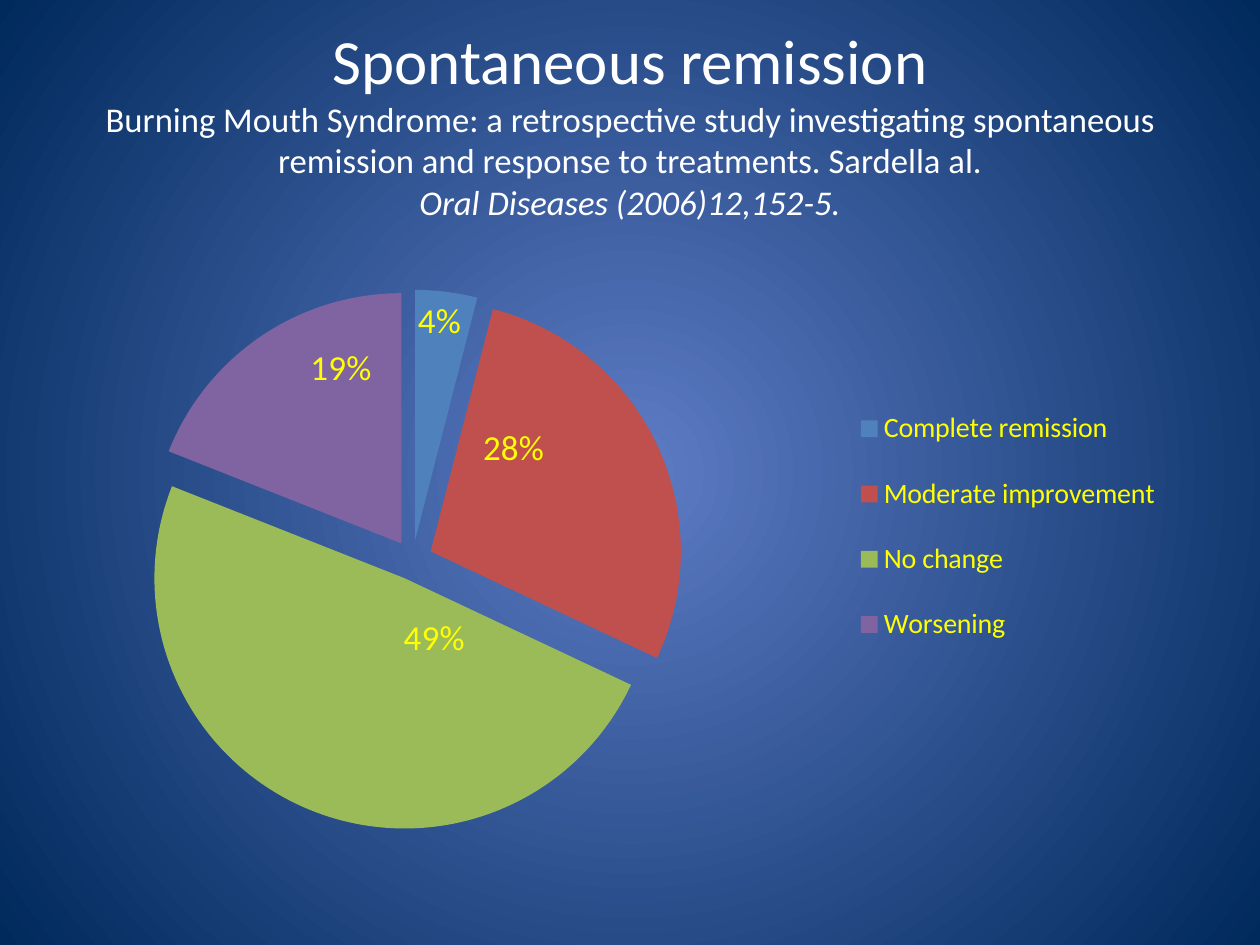
from lxml import etree
from pptx import Presentation
from pptx.chart.data import CategoryChartData
from pptx.dml.color import RGBColor
from pptx.enum.chart import XL_CHART_TYPE, XL_LABEL_POSITION, XL_LEGEND_POSITION
from pptx.enum.text import MSO_ANCHOR, MSO_AUTO_SIZE, PP_ALIGN
from pptx.oxml import parse_xml
from pptx.oxml.ns import nsdecls, qn
from pptx.util import Inches, Pt

PIE = XL_CHART_TYPE.PIE
CENTER_LABEL = XL_LABEL_POSITION.CENTER
RIGHT = XL_LEGEND_POSITION.RIGHT
MIDDLE = MSO_ANCHOR.MIDDLE
NO_FIT = MSO_AUTO_SIZE.NONE
CENTER = PP_ALIGN.CENTER

FONT = "Calibri"
WHITE = RGBColor(0xFF, 0xFF, 0xFF)
YELLOW = RGBColor(0xFF, 0xFF, 0x00)
GLOW = RGBColor(0x5E, 0x7C, 0xC5)
NAVY = RGBColor(0x00, 0x29, 0x5C)
BLUE = RGBColor(0x4F, 0x81, 0xBD)
RED = RGBColor(0xC0, 0x50, 0x4D)
GREEN = RGBColor(0x9B, 0xBB, 0x59)
PURPLE = RGBColor(0x80, 0x64, 0xA2)

TITLE = [
    ("Spontaneous remission", 36, False),
    ("Burning Mouth Syndrome: a retrospective study investigating spontaneous "
     "remission and response to treatments. Sardella al.", 19.8, False),
    ("Oral Diseases (2006)12,152-5.", 19.8, True),
]
OUTCOMES = [
    ("Complete remission", 0.04, BLUE, (0.07, -0.75)),
    ("Moderate improvement", 0.28, RED, (-0.24, -0.4)),
    ("No change", 0.49, GREEN, (0.63, -0.44)),
    ("Worsening", 0.19, PURPLE, (0.08, -0.57)),
]
CHART_W, CHART_H = 9.51, 5.25
PIE_BOX = (1.13, 0.52, 4.29, 4.29)
LEGEND_BOX = (6.75, 1.24, 2.5, 2.32)


def set_font(font, size, color=YELLOW, italic=False):
    font.name = FONT
    font.size = Pt(size)
    font.italic = italic
    font.color.rgb = color


def add_text(p, text, **fmt):
    r = p.add_run()
    r.text = text
    set_font(r.font, **fmt)


def manual_layout(x, y, w=None, h=None, target=None):
    layout = parse_xml(f"<c:layout {nsdecls('c')}><c:manualLayout/></c:layout>")
    parts = []
    if target:
        parts.append(("layoutTarget", target))
    if w:
        parts += [("xMode", "edge"), ("yMode", "edge")]
    parts += [("x", x / CHART_W), ("y", y / CHART_H)]
    if w:
        parts += [("w", w / CHART_W), ("h", h / CHART_H)]
    for tag, value in parts:
        etree.SubElement(layout[0], qn(f"c:{tag}")).set("val", str(value))
    return layout


def place(element, layout, after=None):
    for old in element.findall(qn("c:layout")):
        element.remove(old)
    if after is None:
        element.insert(0, layout)
    else:
        after.addnext(layout)


def paint_background(s):
    fill = s.background.fill
    fill.gradient()
    for stop, color in zip(fill.gradient_stops, (GLOW, NAVY)):
        stop.color.rgb = color
    for stop, position in zip(fill.gradient_stops, (0, 1)):
        stop.position = position
    lin = next(s.background._cSld.iter(qn("a:lin")))
    lin.getparent().replace(lin, parse_xml(
        f'<a:path {nsdecls("a")} path="circle">'
        '<a:fillToRect l="50000" t="50000" r="50000" b="50000"/></a:path>'))


def add_title(s):
    sp = s.shapes.title
    sp.left, sp.top, sp.width, sp.height = map(Inches, (0.5, 0.39, 9, 1.16))
    tf = sp.text_frame
    tf.word_wrap = True
    tf.auto_size = NO_FIT
    tf.vertical_anchor = MIDDLE
    p = tf.paragraphs[0]
    p.alignment = CENTER
    for i, (text, size, italic) in enumerate(TITLE):
        if i:
            p.add_line_break()
        add_text(p, text, size=size, color=WHITE, italic=italic)


def add_pie(s):
    data = CategoryChartData(number_format="0%")
    data.categories = [name for name, *_ in OUTCOMES]
    data.add_series("Series 1", [share for _, share, *_ in OUTCOMES])
    chart = s.shapes.add_chart(PIE, Inches(0), Inches(1.78),
                               Inches(CHART_W), Inches(CHART_H), data).chart
    chart.has_title = False
    set_font(chart.font, 10, WHITE)
    chart.has_legend = True
    legend = chart.legend
    legend.position = RIGHT
    legend.include_in_layout = False
    set_font(legend.font, 16)
    place(legend._element, manual_layout(*LEGEND_BOX),
          legend._element.find(qn("c:legendPos")))

    plot = chart.plots[0]
    plot.vary_by_categories = True
    place(plot._element.getparent(), manual_layout(*PIE_BOX, target="inner"))
    series = plot.series[0]
    labels = series.data_labels
    labels.show_value = True
    labels.number_format = "0%"
    labels.number_format_is_linked = False
    labels.position = CENTER_LABEL
    set_font(labels.font, 20)
    for lines in labels._element.findall(qn("c:showLeaderLines")):
        lines.set("val", "0")

    for i, (_, _, color, offset) in enumerate(OUTCOMES):
        point = series.points[i]
        point.format.fill.solid()
        point.format.fill.fore_color.rgb = color
        label = point.data_label
        set_font(label.font, 20)
        label.position = CENTER_LABEL
        idx = labels._element.findall(qn("c:dLbl"))[i].find(qn("c:idx"))
        idx.addnext(parse_xml(
            f'<c:numFmt {nsdecls("c")} formatCode="0%" sourceLinked="0"/>'))
        place(idx.getparent(), manual_layout(*offset), idx)

    explosion = parse_xml(f'<c:explosion {nsdecls("c")} val="8"/>')
    series._element.find(qn("c:dPt")).addprevious(explosion)


def main():
    prs = Presentation()
    prs.slide_width, prs.slide_height = Inches(10), Inches(7.5)
    s = prs.slides.add_slide(prs.slide_layouts[5])
    paint_background(s)
    add_title(s)
    add_pie(s)
    prs.save("out.pptx")


if __name__ == "__main__":
    main()
